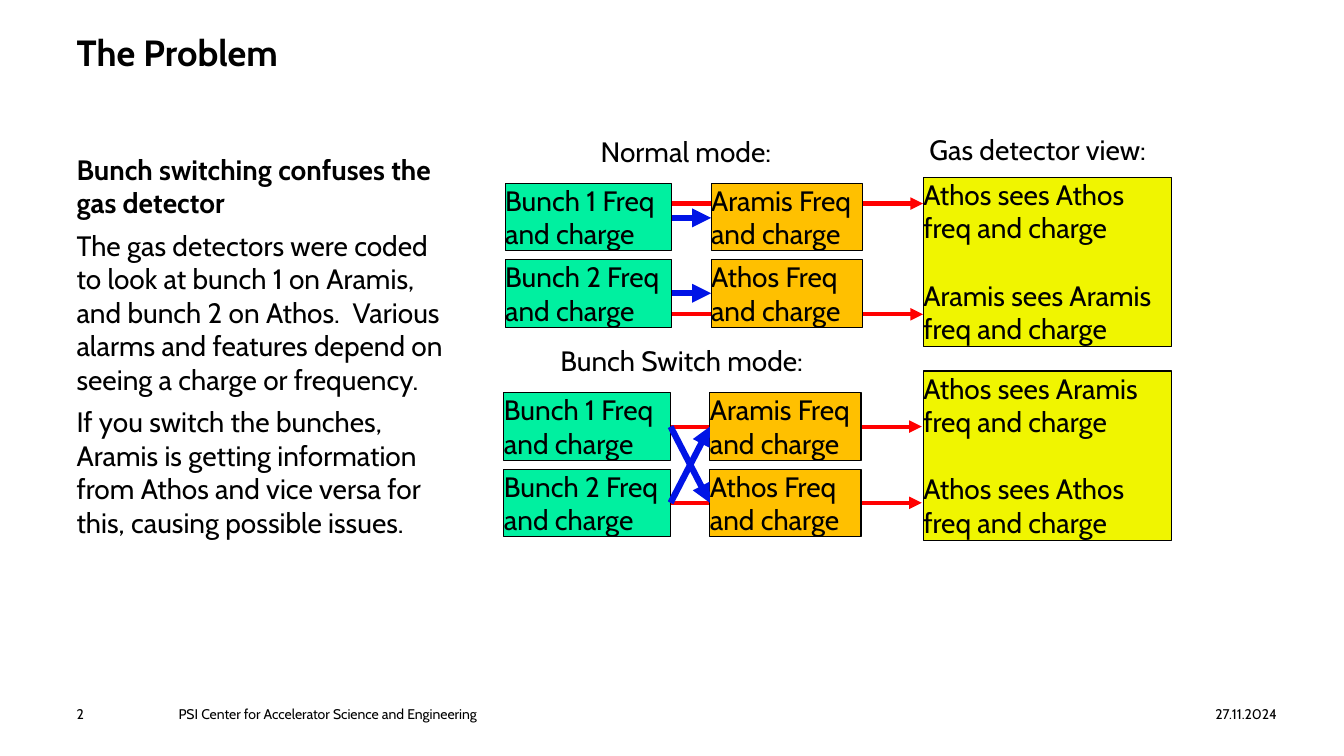
import pptx
import pptx.dml.color
import pptx.enum.shapes
import pptx.enum.text
import pptx.oxml.ns
import pptx.util
from lxml import etree

Cm, Pt = pptx.util.Cm, pptx.util.Pt
ALIGN = pptx.enum.text.PP_ALIGN
FONT = "Cabin"
COLORS = {"text": "000000", "bunch": "00F0A0", "line": "FFC000",
          "view": "F0F500", "signal": "FF0000", "route": "0014E6"}
BOX_H = 1.7
BUNCH_W, BEAMLINE_W = 4.2, 3.81
BEAMLINE_DX = 5.19  # from bunch box to beamline box
VIEW_X = 23.27


def rgb(name):
    return pptx.dml.color.RGBColor.from_string(COLORS[name])


def add_text(sp, paragraphs, size=20, bold_first=False, gap=0, align=ALIGN.LEFT):
    tf = sp.text_frame
    tf.word_wrap = True
    tf.vertical_anchor = pptx.enum.text.MSO_ANCHOR.TOP
    tf.margin_left = tf.margin_top = tf.margin_right = tf.margin_bottom = 0
    for i, text in enumerate(paragraphs):
        p = tf.add_paragraph() if i else tf.paragraphs[0]
        p.alignment = align
        if i and gap:
            p.space_before = Pt(gap)
        r = p.add_run()
        r.text = text
        r.font.name = FONT
        r.font.size = Pt(size)
        r.font.bold = bold_first and i == 0
        r.font.color.rgb = rgb("text")


def add_label(s, x, y, w, h, *paragraphs, **style):
    sp = s.shapes.add_textbox(Cm(x), Cm(y), Cm(w), Cm(h))
    add_text(sp, paragraphs, **style)


def add_box(s, x, y, w, h, fill, *paragraphs, **style):
    sp = s.shapes.add_shape(pptx.enum.shapes.MSO_SHAPE.RECTANGLE,
                            Cm(x), Cm(y), Cm(w), Cm(h))
    sp.shadow.inherit = False
    sp.fill.solid()
    sp.fill.fore_color.rgb = rgb(fill)
    sp.line.color.rgb = rgb("text")
    sp.line.width = Pt(0.75)
    add_text(sp, paragraphs, **style)


def add_arrow(s, x1, y1, x2, y2, color, width):
    sp = s.shapes.add_connector(pptx.enum.shapes.MSO_CONNECTOR.STRAIGHT,
                                Cm(x1), Cm(y1), Cm(x2), Cm(y2))
    sp.line.color.rgb = rgb(color)
    sp.line.width = Pt(width)
    qn = pptx.oxml.ns.qn
    etree.SubElement(sp.line._ln, qn("a:tailEnd"), type="triangle")
    etree.SubElement(sp._element.spPr, qn("a:effectLst"))


def add_mode(s, x, rows, signals, routes, view_y, view):
    """Draw bunches, beamlines, their arrows and the detector view."""
    out_x, in_x = x + BUNCH_W, x + BEAMLINE_DX
    # Signals run behind the boxes
    for y in signals:
        add_arrow(s, out_x, y, out_x + 6.33, y, "signal", 3)
    for y, bunch, beamline in zip(rows, ("1", "2"), ("Aramis", "Athos")):
        add_box(s, x, y, BUNCH_W, BOX_H, "bunch", f"Bunch {bunch} Freq and charge")
        add_box(s, in_x, y, BEAMLINE_W, BOX_H, "line", f"{beamline} Freq and charge")
    for y1, y2 in routes:
        add_arrow(s, out_x, y1, in_x, y2, "route", 4.5)
    add_box(s, VIEW_X, view_y, 6.25, 4.27, "view", *view, gap=24)


def main():
    prs = pptx.Presentation()
    prs.slide_width, prs.slide_height = Cm(33.87), Cm(19.05)
    s = prs.slides.add_slide(prs.slide_layouts[6])

    # Title and explanation
    add_label(s, 1.93, 0.76, 24.89, 2.26, "The Problem", size=26, bold_first=True)
    add_label(s, 1.93, 3.84, 9.6, 12.9,
              "Bunch switching confuses the gas detector",
              "The gas detectors were coded to look at bunch 1 on Aramis, and bunch 2 "
              "on Athos.  Various alarms and features depend on seeing a charge or "
              "frequency.",
              "If you switch the bunches, Aramis is getting information from Athos and "
              "vice versa for this, causing possible issues.",
              bold_first=True, gap=6)

    # Diagram headings
    add_label(s, 15.14, 3.4, 4.42, 0.86, "Normal mode:")
    add_label(s, 14.12, 8.66, 6.35, 0.86, "Bunch Switch mode:")
    add_label(s, 23.42, 3.33, 5.72, 0.86, "Gas detector view:")

    # Normal mode: each bunch goes straight to its beamline
    add_mode(s, 12.73, (4.62, 6.55), (5.13, 7.92), ((5.49, 5.49), (7.39, 7.39)), 4.47,
             ("Athos sees Athos freq and charge", "Aramis sees Aramis freq and charge"))

    # Switch mode: the routes cross
    top, bottom = 10.75, 12.67
    add_mode(s, 12.7, (9.9, 11.82), (top, bottom), ((top, bottom), (bottom, top)), 9.35,
             ("Athos sees Aramis freq and charge", "Athos sees Athos freq and charge"))

    # Footer
    add_label(s, 1.93, 17.78, 1.96, 0.41, "2", size=10)
    add_label(s, 4.5, 17.78, 22.35, 0.41,
              "PSI Center for Accelerator Science and Engineering", size=10)
    add_label(s, 27.43, 17.78, 4.75, 0.41, "27.11.2024", size=10, align=ALIGN.RIGHT)

    prs.save("out.pptx")


if __name__ == "__main__":
    main()
